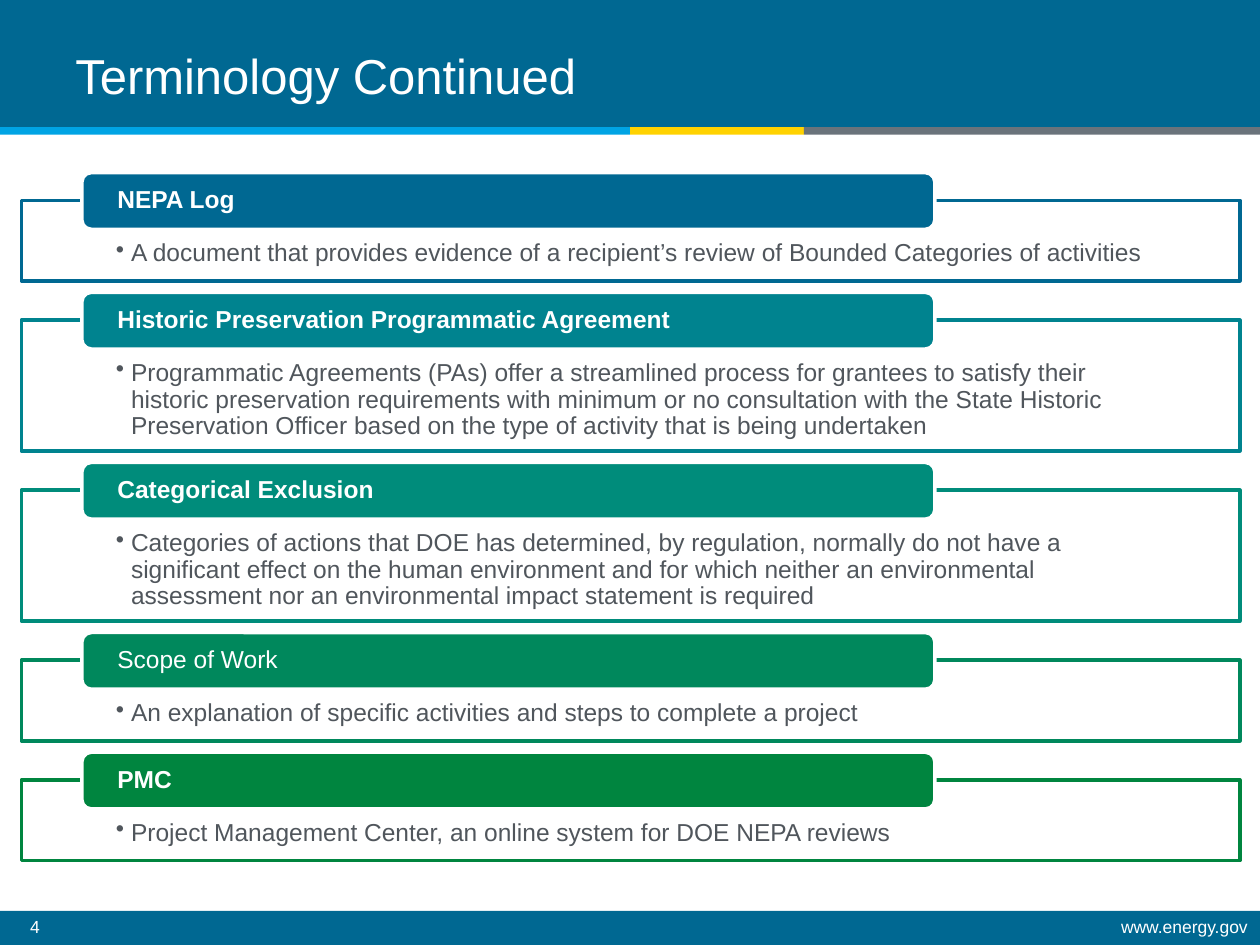
"""Build the terminology slide with five headed definition boxes."""
from lxml.etree import SubElement
from pptx import Presentation
from pptx.dml.color import RGBColor
from pptx.enum.shapes import MSO_SHAPE
from pptx.enum.text import MSO_ANCHOR, PP_ALIGN
from pptx.oxml.ns import qn
from pptx.util import Inches, Pt

WHITE = RGBColor(0xFF, 0xFF, 0xFF)
NAVY = RGBColor(0x00, 0x68, 0x92)
SKY = RGBColor(0x00, 0xA4, 0xE4)
YELLOW = RGBColor(0xFF, 0xD2, 0x00)
GRAY = RGBColor(0x6A, 0x73, 0x7B)
BODY = RGBColor(0x50, 0x56, 0x5C)
TEAL = RGBColor(0x00, 0x83, 0x8F)
SEA = RGBColor(0x00, 0x8C, 0x7B)
JADE = RGBColor(0x00, 0x88, 0x5C)
GREEN = RGBColor(0x00, 0x85, 0x3F)

BANDS = [
    (0, 0, 10, 1.01, NAVY),
    (0, 7.23, 10, 0.27, NAVY),
    (0, 1.01, 5, 0.06, SKY),
    (5, 1.01, 1.38, 0.06, YELLOW),
    (6.38, 1.01, 3.62, 0.06, GRAY),
]
TERMS = [
    ("NEPA Log", True, NAVY, 0.64,
     "A document that provides evidence of a recipient’s review of Bounded Categories of activities"),
    ("Historic Preservation Programmatic Agreement", True, TEAL, 1.04,
     "Programmatic Agreements (PAs) offer a streamlined process for grantees to satisfy their "
     "historic preservation requirements with minimum or no consultation with the State Historic "
     "Preservation Officer based on the type of activity that is being undertaken"),
    ("Categorical Exclusion", True, SEA, 1.04,
     "Categories of actions that DOE has determined, by regulation, normally do not have a "
     "significant effect on the human environment and for which neither an environmental "
     "assessment nor an environmental impact statement is required"),
    ("Scope of Work", False, JADE, 0.64,
     "An explanation of specific activities and steps to complete a project"),
    ("PMC", True, GREEN, 0.64,
     "Project Management Center, an online system for DOE NEPA reviews"),
]
FIRST_TOP = 1.59
GAP = 0.31
HEADER_RISE = 0.22


def add_box(slide, kind, left, top, width, height, fill, line=None):
    shape = slide.shapes.add_shape(
        kind, Inches(left), Inches(top), Inches(width), Inches(height))
    shape.shadow.inherit = False
    shape.fill.solid()
    shape.fill.fore_color.rgb = fill
    if line is None:
        shape.line.fill.background()
    else:
        shape.line.color.rgb = line
        shape.line.width = Pt(2)
    return shape


def write(shape, text, size, color, anchor=MSO_ANCHOR.TOP, align=PP_ALIGN.LEFT,
          bold=False, spacing=0.9, insets=(0.1, 0.05, 0.1, 0.05)):
    frame = shape.text_frame
    frame.word_wrap = True
    frame.vertical_anchor = anchor
    frame.margin_left, frame.margin_top, frame.margin_right, frame.margin_bottom = map(Inches, insets)
    paragraph = frame.paragraphs[0]
    paragraph.alignment = align
    paragraph.line_spacing = spacing
    run = paragraph.add_run()
    run.text = text
    run.font.name = "Arial"
    run.font.size = Pt(size)
    run.font.bold = bold
    run.font.color.rgb = color
    return paragraph


def add_label(slide, left, top, width, height, text, size, **style):
    box = slide.shapes.add_textbox(Inches(left), Inches(top), Inches(width), Inches(height))
    write(box, text, size, WHITE, **style)


def add_bullet(paragraph):
    properties = paragraph._p.get_or_add_pPr()
    properties.set("marL", str(Inches(0.12)))
    properties.set("indent", str(-Inches(0.12)))
    SubElement(properties, qn("a:buChar"), char="•")


def add_term(slide, top, name, bold, color, height, definition):
    frame = add_box(slide, MSO_SHAPE.RECTANGLE, 0.17, top, 9.67, height, WHITE, color)
    fill_color = frame.fill._xPr.find(qn("a:solidFill")).find(qn("a:srgbClr"))
    SubElement(fill_color, qn("a:alpha"), val="90000")
    add_bullet(write(frame, definition, 14, BODY, insets=(0.75, 0.32, 0.75, 0.11)))
    header = add_box(slide, MSO_SHAPE.ROUNDED_RECTANGLE, 0.65, top - HEADER_RISE,
                     6.77, 0.45, color, WHITE)
    write(header, name, 14, WHITE, anchor=MSO_ANCHOR.MIDDLE, bold=bold,
          insets=(0.26, 0, 0.26, 0))


def main():
    presentation = Presentation()
    presentation.slide_width = Inches(10)
    presentation.slide_height = Inches(7.5)
    slide = presentation.slides.add_slide(presentation.slide_layouts[6])
    for left, top, width, height, color in BANDS:
        add_box(slide, MSO_SHAPE.RECTANGLE, left, top, width, height, color)
    add_label(slide, 0.14, 7.24, 7.97, 0.26, "4", 10)
    add_label(slide, 5.99, 7.24, 4.01, 0.26, "www.energy.gov", 10, align=PP_ALIGN.RIGHT)
    add_label(slide, 0.5, 0.01, 7.42, 1.25, "Terminology Continued", 28,
              anchor=MSO_ANCHOR.MIDDLE, spacing=Pt(28))
    top = FIRST_TOP
    for name, bold, color, height, definition in TERMS:
        add_term(slide, top, name, bold, color, height, definition)
        top += height + GAP
    presentation.save("out.pptx")


if __name__ == "__main__":
    main()
